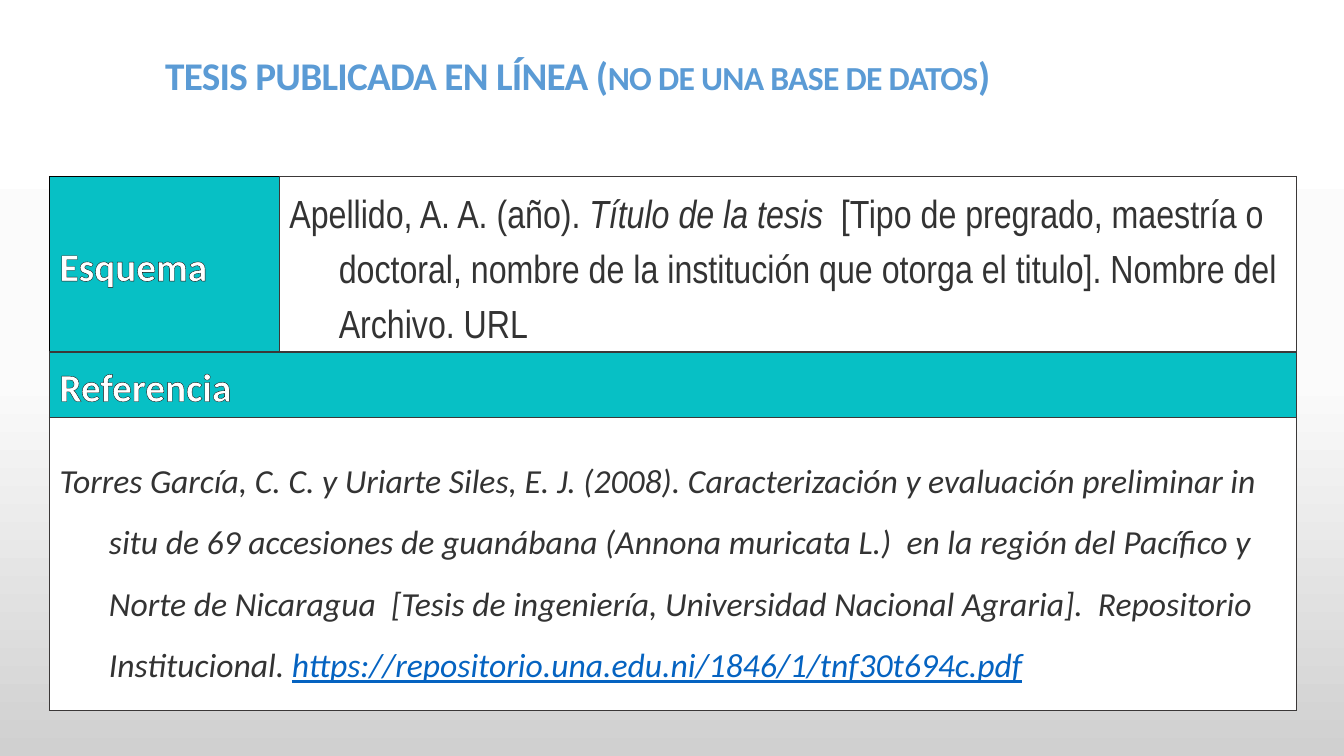
import pptx
import pptx.util
import pptx.dml.color
import pptx.enum.text
import pptx.oxml
import pptx.oxml.ns

Inch = pptx.util.Inches
Pt = pptx.util.Pt
WIDE, HIGH = 13.33, 7.5
TEAL, WHITE, DARK = "07C0C5", "FFFFFF", "333333"
EDGE, BLACK, BLUE, LINK = "3B3838", "000000", "5B9BD5", "0563C1"
NS = pptx.oxml.ns.nsdecls("a")


def color(text):
    return pptx.dml.color.RGBColor.from_string(text)


def line(tag, tone, pts):
    return pptx.oxml.parse_xml(
        f'<a:{tag} {NS} w="{int(Pt(pts))}"><a:solidFill>'
        f'<a:srgbClr val="{tone}"/></a:solidFill></a:{tag}>')


def write(para, text, size, tone, face="Calibri", bold=False, slant=False):
    run = para.add_run()
    run.text = text
    font = run.font
    font.name, font.size = face, Pt(size)
    font.bold, font.italic = bold, slant
    font.color.rgb = color(tone)
    return run


def paint(slide):
    fill = slide.background.fill
    fill.gradient()
    fill.gradient_angle = 270
    stops = fill._fill._gradFill.find(pptx.oxml.ns.qn("a:gsLst"))
    for stop in list(stops):
        stops.remove(stop)
    for share, tone in ((0, WHITE), (50, "FBFBFB"), (100, "D0D0D0")):
        stops.append(pptx.oxml.parse_xml(
            f'<a:gs {NS} pos="{share * 1000}"><a:srgbClr val="{tone}"/></a:gs>'))


def title(slide, left, top, width, height):
    box = slide.shapes.add_textbox(*map(Inch, (left, top, width, height)))
    box.text_frame.word_wrap = True
    para = box.text_frame.paragraphs[0]
    for text, size in (("TESIS PUBLICADA EN LÍNEA (", 28),
                       ("NO DE UNA BASE DE DATOS", 24), (")", 28)):
        run = write(para, text, size, BLUE, bold=True)
        run.font._element.set("spc", "-50")


def style(cell, tone, space, sides):
    cell.fill.solid()
    cell.fill.fore_color.rgb = color(tone)
    cell.vertical_anchor = pptx.enum.text.MSO_ANCHOR.MIDDLE
    props = cell._tc.get_or_add_tcPr()
    for spot, side in enumerate("LRTB"):
        props.insert(spot, line("ln" + side, sides.get(side, EDGE), 1))
    para = cell.text_frame.paragraphs[0]
    para.line_spacing, para.space_after = space, Pt(10)
    indent = para._p.get_or_add_pPr()
    indent.set("marL", str(Inch(0.49)))
    indent.set("indent", str(-Inch(0.49)))
    return para


def label(cell, text, sides={}):
    run = write(style(cell, TEAL, 1.15, sides), text, 28, WHITE, bold=True)
    run.font._element.insert(0, line("ln", "0D0D0D", 0.75))


def scheme(cell):
    para = style(cell, WHITE, 1.5, {})
    for text, slant in (
            ("Apellido, A. A. (año). ", False), ("Título de la tesis  ", True),
            ("[Tipo de pregrado, maestría o doctoral, nombre de la institución "
             "que otorga el titulo]. Nombre del Archivo. URL", False)):
        write(para, text, 28, DARK, "Arial Narrow", slant=slant)


def sample(cell):
    para = style(cell, WHITE, 1.5, {})
    write(para, "Torres García, C. C. y Uriarte Siles, E. J. (2008). "
          "Caracterización y evaluación preliminar in situ de 69 accesiones de "
          "guanábana (Annona muricata L.)  en la región del Pacífico y Norte de "
          "Nicaragua  [Tesis de ingeniería, Universidad Nacional Agraria].  "
          "Repositorio Institucional. ", 24, DARK, slant=True)
    link = write(para, "https://repositorio.una.edu.ni/1846/1/tnf30t694c.pdf",
                 24, LINK, slant=True)
    link.font.underline = True


def grid(slide, left, top, width, height):
    cols, rows = (2.28, 10.09), (1.29, 0.57, 2.91)
    frame = slide.shapes.add_table(
        len(rows), len(cols), *map(Inch, (left, top, width, height)))
    table = frame.table
    table.first_row = table.horz_banding = False
    for col, size in zip(table.columns, cols):
        col.width = Inch(size)
    for row, size in zip(table.rows, rows):
        row.height = Inch(size)
    for row in (1, 2):
        table.cell(row, 0).merge(table.cell(row, 1))
        style(table.cell(row, 1), WHITE, 1, {})
    label(table.cell(0, 0), "Esquema", {"L": BLACK, "T": BLACK})
    scheme(table.cell(0, 1))
    label(table.cell(1, 0), "Referencia")
    sample(table.cell(2, 0))


def main():
    deck = pptx.Presentation()
    deck.slide_width, deck.slide_height = Inch(WIDE), Inch(HIGH)
    slide = deck.slides.add_slide(deck.slide_layouts[6])
    paint(slide)
    grid(slide, 0.49, 1.75, 12.37, 4.94)
    title(slide, 1.54, 0.46, 9.77, 0.57)
    deck.save("out.pptx")


if __name__ == "__main__":
    main()
